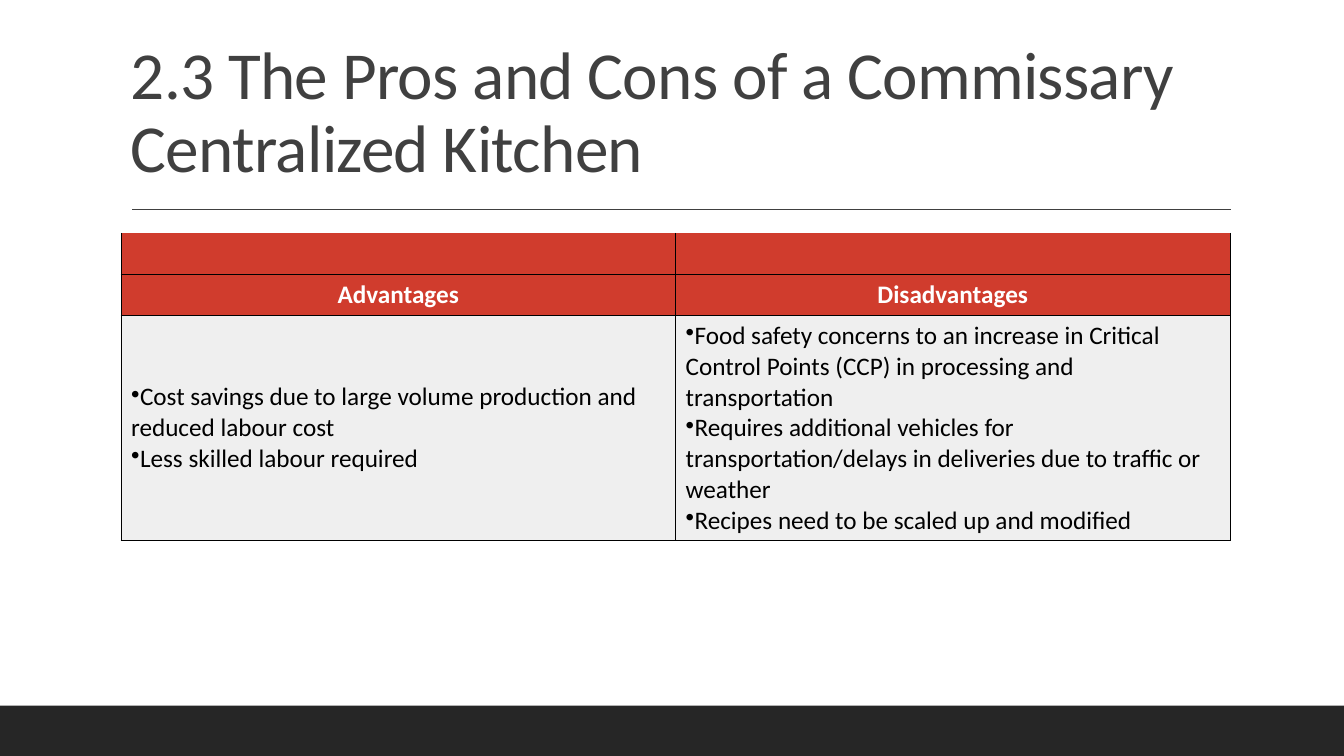
from lxml import etree
from pptx import Presentation
from pptx.dml.color import RGBColor
from pptx.enum import shapes, text
from pptx.oxml import ns
from pptx.util import Inches, Pt

CHARCOAL = RGBColor(0x26, 0x26, 0x26)
GREY = RGBColor(0x40, 0x40, 0x40)
RED = RGBColor(0xD0, 0x3C, 0x2D)
PALE = RGBColor(0xEF, 0xEF, 0xEF)
WHITE = RGBColor(0xFF, 0xFF, 0xFF)
BLACK = RGBColor(0, 0, 0)


def write(frame, lines, size, color, bold=False, align=text.PP_ALIGN.LEFT,
          bullet=None, line_spacing=None, tracking=None):
    for number, line in enumerate(lines):
        paragraph = frame.paragraphs[0] if number == 0 else frame.add_paragraph()
        paragraph.alignment = align
        if line_spacing:
            paragraph.line_spacing = line_spacing
        if bullet:
            properties = paragraph._p.get_or_add_pPr()
            properties.set("marL", "0")
            properties.set("indent", "0")
            etree.SubElement(properties, ns.qn("a:buChar")).set("char", bullet)
        run = paragraph.add_run()
        run.text = line
        run.font.name = "Calibri"
        run.font.size = Pt(size)
        run.font.bold = bold
        run.font.color.rgb = color
        if tracking:
            run.font._element.set("spc", str(int(tracking * 100)))


def add_borders(cell, sides):
    """Draw black lines on the named sides (L, R, T, B) and clear the others."""
    properties = cell._tc.get_or_add_tcPr()
    for position, side in enumerate("LRTB"):
        border = etree.Element(ns.qn(f"a:ln{side}"), w=str(Pt(0.75)))
        if side in sides:
            fill = etree.SubElement(border, ns.qn("a:solidFill"))
            etree.SubElement(fill, ns.qn("a:srgbClr"), val=str(BLACK))
        else:
            etree.SubElement(border, ns.qn("a:noFill"))
        properties.insert(position, border)


prs = Presentation()
prs.slide_width, prs.slide_height = Inches(13.33), Inches(7.5)
slide = prs.slides.add_slide(prs.slide_layouts[6])

footer_band = slide.shapes.add_shape(
    shapes.MSO_SHAPE.RECTANGLE, 0, Inches(7), prs.slide_width, Inches(0.5))
footer_band.shadow.inherit = False
footer_band.fill.solid()
footer_band.fill.fore_color.rgb = CHARCOAL
footer_band.line.fill.background()

title_rule = slide.shapes.add_connector(
    shapes.MSO_CONNECTOR.STRAIGHT, Inches(1.31), Inches(2.08), Inches(12.21), Inches(2.08))
title_rule.line.color.rgb = GREY
title_rule.line.width = Pt(1)
etree.SubElement(title_rule._element.spPr, ns.qn("a:effectLst"))

title = slide.shapes.add_textbox(Inches(1.2), Inches(0.31), Inches(11), Inches(1.59)).text_frame
title.word_wrap = True
title.vertical_anchor = text.MSO_ANCHOR.BOTTOM
write(title, ["2.3 The Pros and Cons of a Commissary Centralized Kitchen"],
      48, GREY, line_spacing=0.9, tracking=-0.5)

columns = [
    ("Advantages", [
        "Cost savings due to large volume production and reduced labour cost",
        "Less skilled labour required",
    ]),
    ("Disadvantages", [
        "Food safety concerns to an increase in Critical Control Points (CCP) "
        "in processing and transportation",
        "Requires additional vehicles for transportation/delays in deliveries "
        "due to traffic or weather",
        "Recipes need to be scaled up and modified",
    ]),
]
row_heights = [0.41, 0.41, 2.23]
pros_cons = slide.shapes.add_table(
    len(row_heights), len(columns), Inches(1.2), Inches(2.31),
    Inches(11), Inches(sum(row_heights))).table
pros_cons.horz_banding = False
for row, height in zip(pros_cons.rows, row_heights):
    row.height = Inches(height)

for column, (heading, points) in enumerate(columns):
    pros_cons.columns[column].width = Inches(5.5)
    for row, fill in enumerate([RED, RED, PALE]):
        cell = pros_cons.cell(row, column)
        cell.vertical_anchor = text.MSO_ANCHOR.MIDDLE
        cell.fill.solid()
        cell.fill.fore_color.rgb = fill
        add_borders(cell, "LRB" if row == 0 else "LRTB")
    write(pros_cons.cell(1, column).text_frame, [heading], 18, WHITE,
          bold=True, align=text.PP_ALIGN.CENTER)
    write(pros_cons.cell(2, column).text_frame, points, 18, BLACK, bullet="•")

prs.save("out.pptx")
